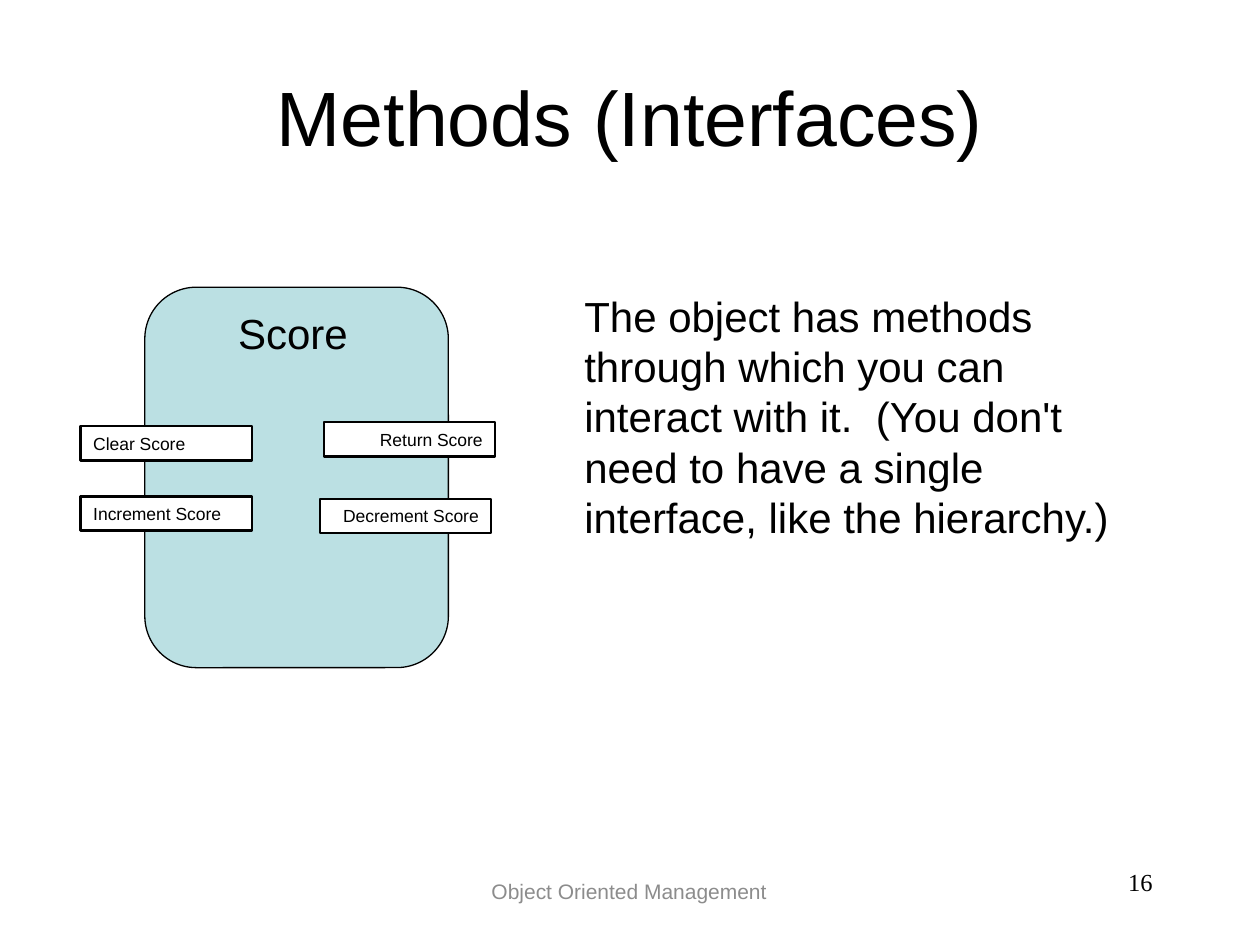
"""Build the slide about the methods of a Score object."""
from dataclasses import dataclass

from pptx import Presentation
from pptx.dml.color import RGBColor
from pptx.enum import shapes, text
from pptx.shapes.autoshape import Shape
from pptx.slide import Slide
from pptx.util import Cm, Pt

BLACK = RGBColor(0x00, 0x00, 0x00)
WHITE = RGBColor(0xFF, 0xFF, 0xFF)
PALE_TEAL = RGBColor(0xBB, 0xE0, 0xE3)
GREY = RGBColor(0x8C, 0x8C, 0x8C)

LEFT, CENTER, RIGHT = text.PP_ALIGN.LEFT, text.PP_ALIGN.CENTER, text.PP_ALIGN.RIGHT
TOP, MIDDLE = text.MSO_ANCHOR.TOP, text.MSO_ANCHOR.MIDDLE


@dataclass(frozen=True)
class Box:
    left: float
    top: float
    width: float
    height: float

    def lengths(self) -> tuple[Cm, Cm, Cm, Cm]:
        return Cm(self.left), Cm(self.top), Cm(self.width), Cm(self.height)


@dataclass(frozen=True)
class Method:
    label: str
    left: float
    top: float
    align: text.PP_ALIGN


METHODS = (
    Method("Clear Score", 1.63, 8.59, LEFT),
    Method("Increment Score", 1.63, 10.01, LEFT),
    Method("Return Score", 6.53, 8.51, RIGHT),
    Method("Decrement Score", 6.45, 10.06, RIGHT),
)


def write(shape: Shape, wording: str, *, size: float, color: RGBColor = BLACK,
          font: str = "Arial", align: text.PP_ALIGN = LEFT,
          anchor: text.MSO_ANCHOR = TOP, wrap: bool = True) -> None:
    """Put formatted wording into a shape."""
    frame = shape.text_frame
    frame.word_wrap = wrap
    frame.auto_size = text.MSO_AUTO_SIZE.NONE
    frame.vertical_anchor = anchor
    frame.margin_left = frame.margin_right = Cm(0.25)
    frame.margin_top = frame.margin_bottom = Cm(0.13)
    paragraph = frame.paragraphs[0]
    paragraph.alignment = align
    run = paragraph.add_run()
    run.text = wording
    run.font.size = Pt(size)
    run.font.name = font
    run.font.color.rgb = color


def add_label(slide: Slide, box: Box, wording: str, **style) -> None:
    """Add a text box."""
    write(slide.shapes.add_textbox(*box.lengths()), wording, **style)


def add_block(slide: Slide, kind: shapes.MSO_SHAPE, box: Box,
              fill: RGBColor, line_width: float) -> Shape:
    """Add a filled shape with a black outline."""
    block = slide.shapes.add_shape(kind, *box.lengths())
    block.shadow.inherit = False
    block.fill.solid()
    block.fill.fore_color.rgb = fill
    block.line.color.rgb = BLACK
    block.line.width = Pt(line_width)
    return block


def add_method(slide: Slide, method: Method) -> None:
    """Add one method tag on the edge of the object."""
    tag = add_block(slide, shapes.MSO_SHAPE.RECTANGLE,
                    Box(method.left, method.top, 3.45, 0.69), WHITE, 1.5)
    write(tag, method.label, size=10, align=method.align)


def main() -> None:
    """Build and save the slide."""
    deck = Presentation()
    deck.slide_width, deck.slide_height = Cm(25.4), Cm(19.05)
    slide = deck.slides.add_slide(deck.slide_layouts[5])

    title = slide.shapes.title
    title.left, title.top, title.width, title.height = Box(1.91, 1.27, 21.59, 2.11).lengths()
    write(title, "Methods (Interfaces)", size=44, align=CENTER, anchor=MIDDLE)

    score = add_block(slide, shapes.MSO_SHAPE.ROUNDED_RECTANGLE,
                      Box(2.92, 5.79, 6.12, 7.67), PALE_TEAL, 0.75)
    score.adjustments[0] = 0.17
    add_label(slide, Box(4.55, 6.07, 2.72, 1.27), "Score", size=24, wrap=False)
    add_label(slide, Box(11.53, 5.72, 11.15, 5.33),
              "The object has methods through which you can interact with it.  "
              "(You don't need to have a single interface, like the hierarchy.)", size=24)
    for method in METHODS:
        add_method(slide, method)

    add_label(slide, Box(7.49, 17.35, 10.39, 1.24), "Object Oriented Management",
              size=12, color=GREY, align=CENTER, anchor=MIDDLE)
    add_label(slide, Box(18.21, 17.35, 5.28, 1.24), "16",
              size=14, font="Times New Roman", align=RIGHT)
    deck.save("out.pptx")


if __name__ == "__main__":
    main()
